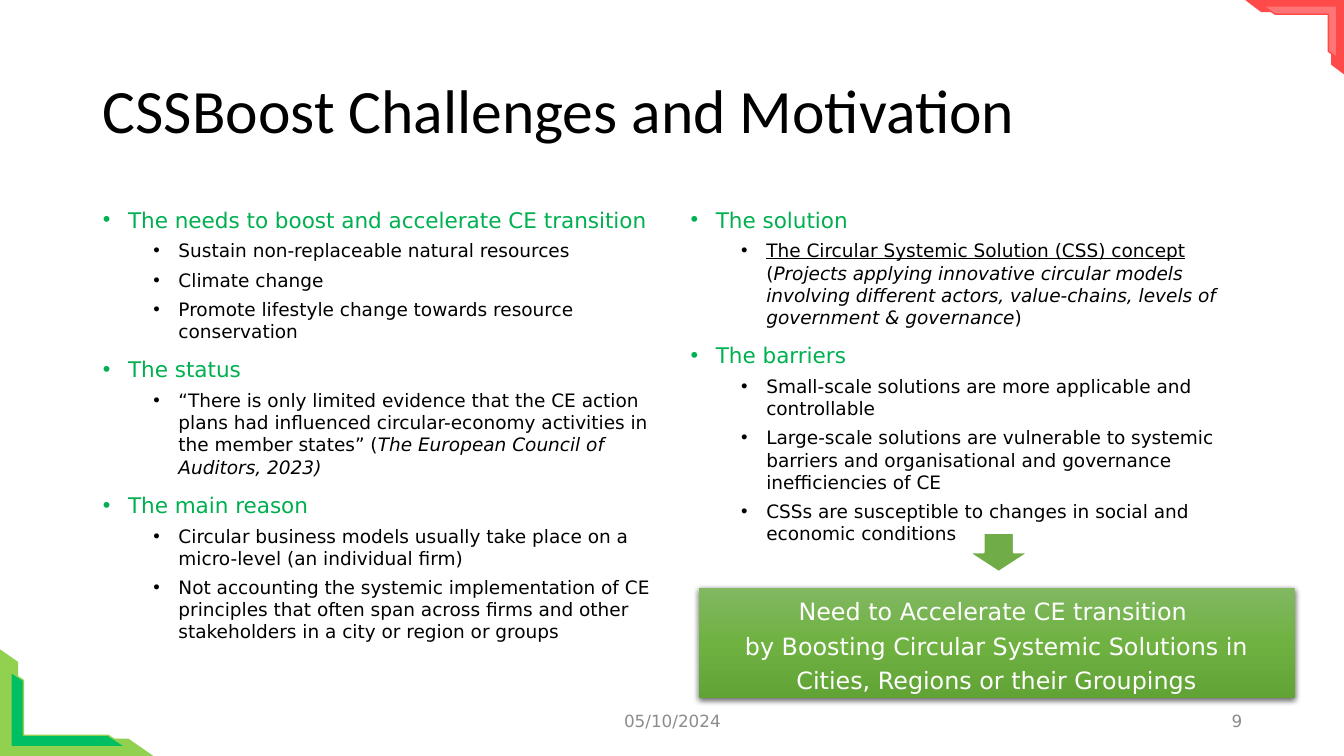
from lxml import etree
from pptx import Presentation
from pptx.dml.color import RGBColor
from pptx.enum.shapes import MSO_SHAPE as SHAPE
from pptx.enum.text import MSO_ANCHOR as ANCHOR, MSO_AUTO_SIZE as AUTO, PP_ALIGN as ALIGN
from pptx.oxml import parse_xml
from pptx.oxml.ns import nsdecls, qn
from pptx.util import Inches, Pt

BODY_FONT = "DejaVu Sans"


def add_run(p, text, size, color, font=BODY_FONT, italic=False, underline=False):
    r = p.add_run()
    r.text = text
    r.font.name, r.font.size = font, Pt(size)
    r.font.color.rgb = RGBColor.from_string(color)
    r.font.italic, r.font.underline = italic, underline


def place(sp, left, top, width, height):
    sp.left, sp.top = Inches(left), Inches(top)
    sp.width, sp.height = Inches(width), Inches(height)


prs = Presentation()
prs.slide_width, prs.slide_height = Inches(13.33), Inches(7.5)
s = prs.slides.add_slide(prs.slide_layouts[3])
title, left_body, right_body = s.placeholders

# Title
place(title, 0.92, 0.4, 11.5, 1.45)
tf = title.text_frame
tf.auto_size, tf.vertical_anchor = AUTO.NONE, ANCHOR.MIDDLE
p = tf.paragraphs[0]
p.alignment, p.line_spacing = ALIGN.LEFT, 0.9
add_run(p, "CSSBoost Challenges and Motivation", 44, "000000", "Calibri")

# Two columns: each heading is followed by its points, each point by its (text, style) runs
left_topics = [
    ("The needs to boost and accelerate CE transition", [
        [("Sustain non-replaceable natural resources", {})],
        [("Climate change", {})],
        [("Promote lifestyle change towards resource conservation", {})],
    ]),
    ("The status", [
        [("“There is only limited evidence that the CE action plans had influenced "
          "circular-economy activities in the member states” (", {}),
         ("The European Council of Auditors, 2023)", {"italic": True})],
    ]),
    ("The main reason", [
        [("Circular business models usually take place on a micro-level (an individual firm)", {})],
        [("Not accounting the systemic implementation of CE principles that often span "
          "across firms and other stakeholders in a city or region or groups", {})],
    ]),
]
right_topics = [
    ("The solution", [
        [("The Circular Systemic Solution (CSS) concept ", {"underline": True}),
         ("(", {}),
         ("Projects applying innovative circular models involving different actors, "
          "value-chains, levels of government & governance", {"italic": True}),
         (")", {})],
    ]),
    ("The barriers", [
        [("Small-scale solutions are more applicable and controllable", {})],
        [("Large-scale solutions are vulnerable to systemic barriers and organisational "
          "and governance inefficiencies of CE", {})],
        [("CSSs are susceptible to changes in social and economic conditions", {})],
    ]),
]

for body, left, topics in [(left_body, 0.92, left_topics), (right_body, 6.75, right_topics)]:
    place(body, left, 2, 5.67, 4.76)
    tf = body.text_frame
    tf.auto_size, tf.vertical_anchor = AUTO.NONE, ANCHOR.TOP
    lines = []
    for heading, points in topics:
        lines.append((0, [(heading, {})]))
        lines += [(1, runs) for runs in points]
    for i, (level, runs) in enumerate(lines):
        p = tf.paragraphs[0] if i == 0 else tf.add_paragraph()
        p.level = level
        p.space_before = Pt(0 if i == 0 else 5 if level else 10)
        pPr = p._p.get_or_add_pPr()
        pPr.set("marL", str(Inches(0.75 if level else 0.25)))
        pPr.set("indent", str(Inches(-0.25)))
        etree.SubElement(pPr, qn("a:buFont")).set("typeface", "Arial")
        etree.SubElement(pPr, qn("a:buChar")).set("char", "•")
        size, color = (13.2, "000000") if level else (15.4, "00B050")
        for text, style in runs:
            add_run(p, text, size, color, **style)

# Date and slide number
for text, left, width, align in [("05/10/2024", 4.42, 4.5, ALIGN.CENTER),
                                 ("9", 9.42, 3, ALIGN.RIGHT)]:
    tf = s.shapes.add_textbox(Inches(left), Inches(6.95), Inches(width), Inches(0.4)).text_frame
    tf.word_wrap, tf.vertical_anchor = True, ANCHOR.MIDDLE
    p = tf.paragraphs[0]
    p.alignment = align
    add_run(p, text, 12, "8C8C8C")

# Corner ornaments: a large and a small half frame in each
green_corner = [(0.23, 6.22, 1.05, 1.51, "92D050", "92D050"),
                (0.31, 6.47, 0.74, 1.14, "00BF63", "92D050")]
red_corner = [(12.48, -0.12, 0.73, 0.97, "FF4A4A", "FF4B4B"),
              (12.64, -0.05, 0.51, 0.73, "FF7575", "FF4A4A")]
for rotation, frames in [(270, green_corner), (90, red_corner)]:
    group = s.shapes.add_group_shape()
    for left, top, width, height, fill, line in frames:
        sp = group.shapes.add_shape(SHAPE.HALF_FRAME, Inches(left), Inches(top),
                                    Inches(width), Inches(height))
        sp.rotation = rotation
        sp.adjustments[0], sp.adjustments[1] = 0.166, 0.157
        sp.shadow.inherit = False
        sp.fill.solid()
        sp.fill.fore_color.rgb = RGBColor.from_string(fill)
        sp.line.color.rgb = RGBColor.from_string(line)
        sp.line.width = Pt(1)

# Conclusion box with gradient and shadow
box = s.shapes.add_shape(SHAPE.RECTANGLE, Inches(6.93), Inches(5.83), Inches(5.91), Inches(1.09))
box.line.fill.background()
stops = "".join(f'<a:gs pos="{pos}000"><a:srgbClr val="{color}"/></a:gs>'
                for pos, color in [(0, "81B861"), (50, "6FB242"), (100, "62A336")])
box._element.spPr.find(qn("a:prstGeom")).addnext(parse_xml(
    f'<a:gradFill {nsdecls("a")} rotWithShape="1"><a:gsLst>{stops}</a:gsLst>'
    '<a:lin ang="5400000" scaled="0"/></a:gradFill>'))
box._element.spPr.append(parse_xml(
    f'<a:effectLst {nsdecls("a")}><a:outerShdw blurRad="{Pt(4.5)}" dist="{Pt(1.5)}" '
    'dir="5400000" algn="ctr" rotWithShape="0"><a:srgbClr val="000000">'
    '<a:alpha val="63000"/></a:srgbClr></a:outerShdw></a:effectLst>'))
tf = box.text_frame
tf.word_wrap, tf.auto_size = True, AUTO.SHAPE_TO_FIT_TEXT
p = tf.paragraphs[0]
p.alignment, p.line_spacing = ALIGN.CENTER, 1.2
add_run(p, "Need to Accelerate CE transition ", 17, "FFFFFF")
p.add_line_break()
add_run(p, "by Boosting Circular Systemic Solutions in Cities, Regions or their Groupings", 17, "FFFFFF")

# Arrow down to the conclusion
arrow = s.shapes.add_shape(SHAPE.RIGHT_ARROW, Inches(9.71), Inches(5.18), Inches(0.39), Inches(0.6))
arrow.rotation = 90
arrow.shadow.inherit = False
arrow.fill.solid()
arrow.fill.fore_color.rgb = RGBColor.from_string("70AD47")
arrow.line.color.rgb = RGBColor.from_string("FFFFFF")
arrow.line.width = Pt(1.5)

prs.save("out.pptx")
